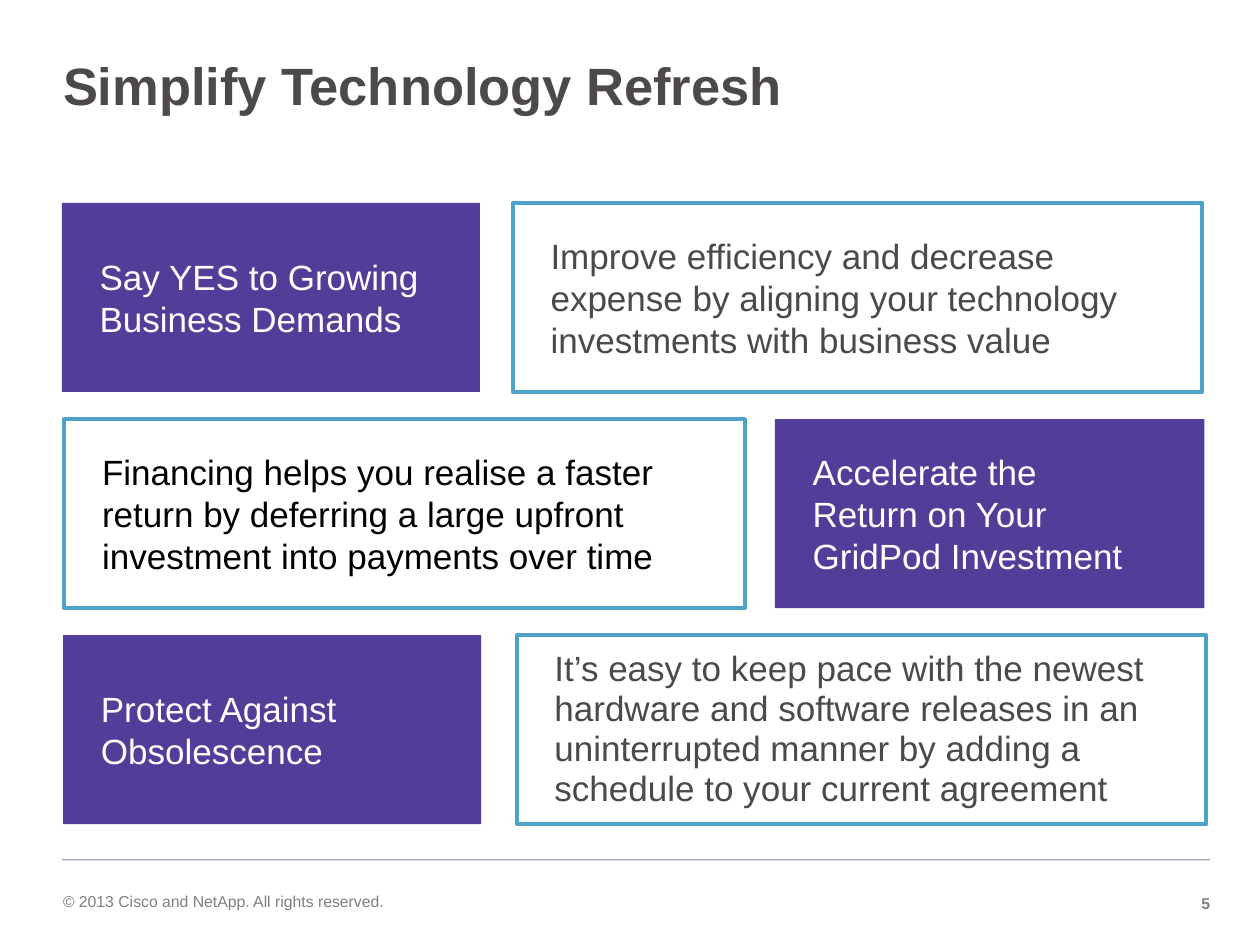
from dataclasses import dataclass

from pptx import Presentation
from pptx.dml.color import RGBColor
from pptx.enum import shapes, text
from pptx.util import Pt


@dataclass(frozen=True)
class Theme:
    font: str = "Arial"
    purple: str = "523D98"
    blue: str = "4EA2C8"
    dark: str = "4C4948"
    black: str = "000000"
    white: str = "FFFFFF"
    grey: str = "7F7F7F"
    rule: str = "99A5B1"
    title_size: float = 30
    body_size: float = 20
    footer_size: float = 9


THEME = Theme()
ROW_TOP, ROW_STEP, ROW_HEIGHT = 116, 123.5, 108

# Each row: (left, width, paragraphs, text colour) for its claim and its detail
ROWS = [
    ((35.3, 239, ["Say YES to Growing", "Business Demands"], THEME.white),
     (293, 394, ["Improve efficiency and decrease",
                 "expense by aligning your technology\ninvestments with business value"],
      THEME.dark)),
    ((442.8, 245.5, ["Accelerate the\nReturn on Your\nGridPod Investment"], THEME.white),
     (36.7, 389, ["Financing helps you realise a faster return by deferring "
                  "a large upfront investment into payments over time"], THEME.black)),
    ((36, 239, ["Protect Against", "Obsolescence"], THEME.white),
     (295.2, 394, ["It’s easy to keep pace with the newest",
                   "hardware and software releases in an uninterrupted manner by adding a",
                   "schedule to your current agreement"], THEME.dark)),
]


def write(frame, paragraphs, size, color, bold=False, align=text.PP_ALIGN.LEFT, spacing=None):
    """Fill a text frame; a newline inside a paragraph becomes a line break."""
    frame.word_wrap = True
    for index, content in enumerate(paragraphs):
        para = frame.paragraphs[0] if index == 0 else frame.add_paragraph()
        para.alignment = align
        if spacing:
            para.line_spacing = spacing
        for number, line in enumerate(content.split("\n")):
            if number:
                para.add_line_break()
            span = para.add_run()
            span.text = line
            span.font.name = THEME.font
            span.font.size = Pt(size)
            span.font.bold = bold
            span.font.color.rgb = RGBColor.from_string(color)


def set_margins(frame, left, top, right, bottom):
    frame.margin_left, frame.margin_top = Pt(left), Pt(top)
    frame.margin_right, frame.margin_bottom = Pt(right), Pt(bottom)


def add_rectangle(page, left, top, width, height, fill=None, line=None):
    box = page.shapes.add_shape(shapes.MSO_SHAPE.RECTANGLE,
                                Pt(left), Pt(top), Pt(width), Pt(height))
    box.shadow.inherit = False
    if fill:
        box.fill.solid()
        box.fill.fore_color.rgb = RGBColor.from_string(fill)
    else:
        box.fill.background()
    if line:
        box.line.color.rgb = RGBColor.from_string(line)
        box.line.width = Pt(2.25)
    else:
        box.line.fill.background()
    return box


def add_label(page, left, top, width, height, content, size, color,
              anchor=text.MSO_ANCHOR.TOP, **style):
    box = page.shapes.add_textbox(Pt(left), Pt(top), Pt(width), Pt(height))
    frame = box.text_frame
    set_margins(frame, 0, 0, 0, 0)
    frame.vertical_anchor = anchor
    write(frame, [content], size, color, **style)


def add_panel(page, left, top, width, height, paragraphs, color, **look):
    box = add_rectangle(page, left, top, width, height, **look)
    frame = box.text_frame
    set_margins(frame, 21.6, 3.6, 7.2, 3.6)
    frame.vertical_anchor = text.MSO_ANCHOR.MIDDLE
    # Four lines need slightly tighter leading to fit the panel
    write(frame, paragraphs, THEME.body_size, color,
          spacing=0.95 if len(paragraphs) > 2 else None)


def add_row(page, top, height, claim, detail):
    """Place a filled claim beside its outlined detail."""
    for (left, width, paragraphs, color), look in (
            (detail, {"line": THEME.blue}), (claim, {"fill": THEME.purple})):
        add_panel(page, left, top, width, height, paragraphs, color, **look)


def add_footer(page, left, top, width):
    add_rectangle(page, left, top, width, 0.72, fill=THEME.rule)
    add_label(page, left + 0.5, top + 18.7, 397, 20,
              "© 2013 Cisco and NetApp. All rights reserved.",
              THEME.footer_size, THEME.grey)
    add_label(page, left + width - 46.8, top + 19.5, 46.8, 13.7, "5",
              THEME.footer_size, THEME.grey, bold=True, align=text.PP_ALIGN.RIGHT)


def main():
    deck = Presentation()
    deck.slide_width, deck.slide_height = Pt(720), Pt(540)
    page = deck.slides.add_slide(deck.slide_layouts[6])
    add_label(page, 36, 20.2, 495.4, 56.2, "Simplify Technology Refresh",
              THEME.title_size, THEME.dark, anchor=text.MSO_ANCHOR.MIDDLE, bold=True)
    for index, (claim, detail) in enumerate(ROWS):
        add_row(page, ROW_TOP + index * ROW_STEP, ROW_HEIGHT, claim, detail)
    add_footer(page, 35.5, 491, 656)
    deck.save("out.pptx")


if __name__ == "__main__":
    main()
